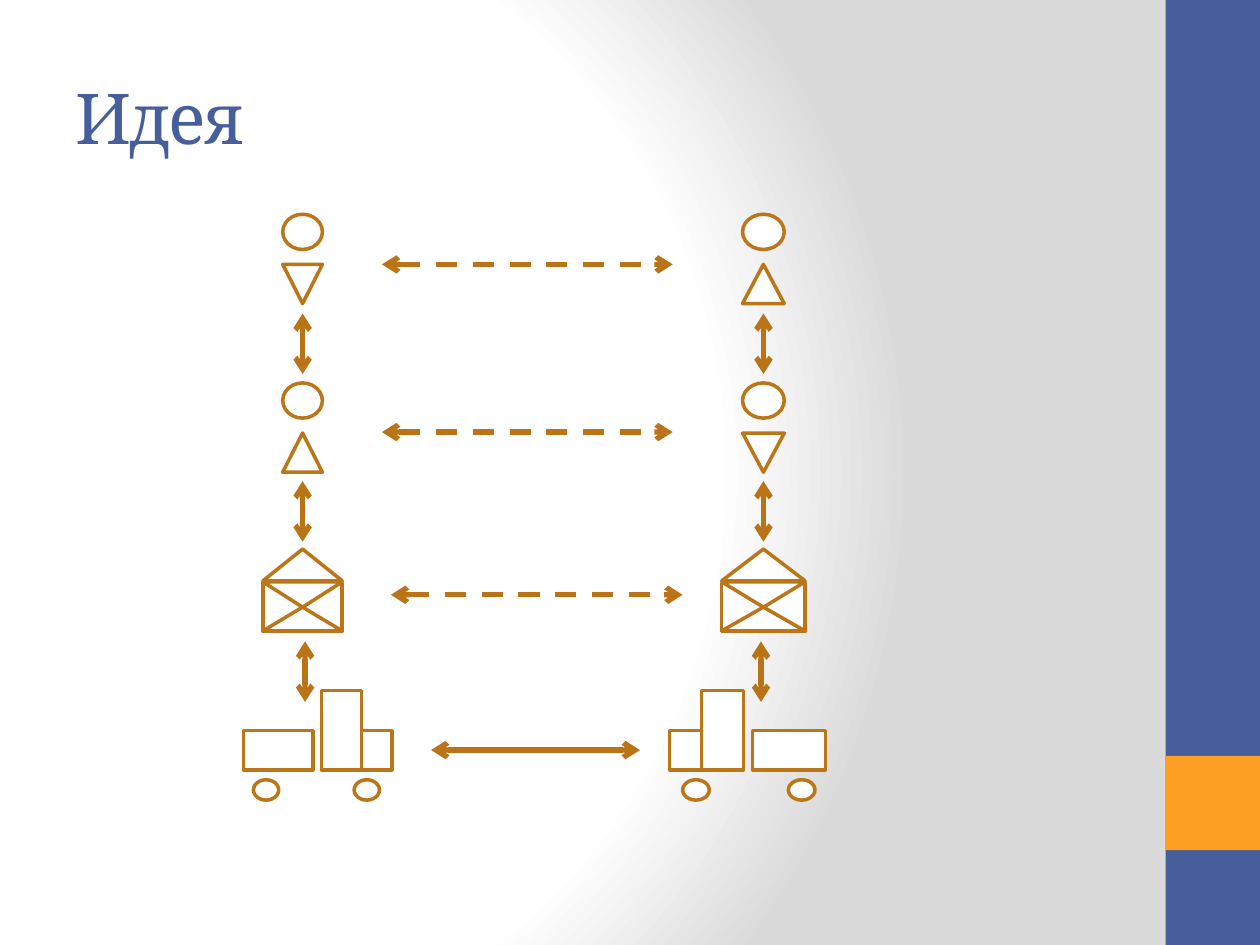
from pptx import Presentation
from pptx.dml.color import RGBColor
from pptx.enum.dml import MSO_LINE
from pptx.enum.shapes import MSO_CONNECTOR, MSO_SHAPE
from pptx.enum.text import MSO_ANCHOR
from pptx.oxml import parse_xml
from pptx.oxml.ns import nsdecls, qn
from pptx.util import Cm, Pt
from lxml.etree import SubElement

COLORS = {
    "white": "FFFFFF", "grey": "DADADA", "blue": "465E9C",
    "orange": "FDA023", "brown": "BB761A", "arrow": "BA7417",
}
RECT, OVAL = MSO_SHAPE.RECTANGLE, MSO_SHAPE.OVAL
TRI = MSO_SHAPE.ISOSCELES_TRIANGLE
STEP = 3.4


def color(name):
    return RGBColor.from_string(COLORS[name])


def paint_back(slide):
    slide.background.fill.gradient()
    old = slide.background._cSld.find(".//" + qn("a:gradFill"))
    stops = "".join(
        f'<a:gs pos="{pos}"><a:srgbClr val="{COLORS[name]}"/></a:gs>'
        for pos, name in ((0, "white"), (75000, "white"), (100000, "grey")))
    new = parse_xml(
        f'<a:gradFill {nsdecls("a")} rotWithShape="1"><a:gsLst>{stops}</a:gsLst>'
        '<a:path path="circle">'
        '<a:fillToRect l="20000" t="50000" r="100000" b="50000"/>'
        '</a:path></a:gradFill>')
    old.getparent().replace(old, new)


def add_box(shapes, kind, x, y, w, h, fill="white", line="brown"):
    box = shapes.add_shape(kind, Cm(x), Cm(y), Cm(w), Cm(h))
    box.shadow.inherit = False
    box.fill.solid()
    box.fill.fore_color.rgb = color(fill)
    if line:
        box.line.color.rgb = color(line)
        box.line.width = Pt(2)
    else:
        box.line.fill.background()
    return box


def add_arrow(shapes, x1, y1, x2, y2, dash=False):
    arrow = shapes.add_connector(
        MSO_CONNECTOR.STRAIGHT, Cm(x1), Cm(y1), Cm(x2), Cm(y2))
    arrow.line.color.rgb = color("arrow")
    arrow.line.width = Pt(3)
    if dash:
        arrow.line.dash_style = MSO_LINE.DASH
    line = arrow.line._get_or_add_ln()
    for end in ("a:headEnd", "a:tailEnd"):
        SubElement(line, qn(end), type="arrow")
    SubElement(arrow._element.spPr, qn("a:effectLst"))


def add_title(slide, text):
    box = slide.shapes.add_textbox(Cm(1.27), Cm(0.76), Cm(21.16), Cm(3.18))
    frame = box.text_frame
    frame.word_wrap = True
    frame.vertical_anchor = MSO_ANCHOR.MIDDLE
    para = frame.paragraphs[0]
    para.text = text
    para.font.name = "Cambria"
    para.font.size = Pt(40)
    para.font.color.rgb = color("blue")
    para.runs[0].font._element.set("spc", "-100")


def add_side(slide, mid, turns, way=1, scale=1):
    shapes = slide.shapes.add_group_shape().shapes

    def part(kind, dx, y, w, h, turn=0):
        x = mid + scale * (way * (dx + w / 2) - w / 2)
        add_box(shapes, kind, x, y, w * scale, h).rotation = turn

    for row, turn in enumerate(turns):
        part(OVAL, -0.4, 4.32 + row * STEP, 0.8, 0.71)
        part(TRI, -0.4, 5.33 + row * STEP, 0.8, 0.79, turn)

    for kind, y, h, turn in ((RECT, 11.76, 0.97, 0), (TRI, 11.07, 0.64, 0),
                             (TRI, 11.73, 0.51, 180), (TRI, 12.24, 0.48, 0)):
        part(kind, -0.8, y, 1.6, h, turn)

    for dx, y, w, h in ((-1.19, 14.73, 1.4, 0.79), (0.38, 13.92, 0.81, 1.6),
                        (1.19, 14.73, 0.61, 0.79)):
        part(RECT, dx, y, w, h)
    for dx in (-0.99, 1.04):
        part(OVAL, dx, 15.72, 0.51, 0.41)

    for dx, y in ((0, 6.32), (0, 9.7), (0.05, 12.93)):
        x = mid + way * dx
        add_arrow(shapes, x, y, x, y + 1.22)


def main():
    deck = Presentation()
    deck.slide_width, deck.slide_height = Cm(25.4), Cm(19.05)
    slide = deck.slides.add_slide(deck.slide_layouts[6])
    paint_back(slide)
    add_box(slide.shapes, RECT, 23.5, 0, 1.9, 19.05, "blue", None)
    add_box(slide.shapes, RECT, 23.5, 15.24, 1.9, 1.9, "orange", None)
    add_title(slide, "Идея")
    add_side(slide, 6.1, (180, 0))
    add_side(slide, 15.39, (0, 180), way=-1, scale=1.05)
    for x1, x2, y, dash in ((7.7, 13.56, 5.33, True), (7.7, 13.56, 8.71, True),
                            (7.88, 13.76, 11.99, True), (8.69, 12.9, 15.12, False)):
        add_arrow(slide.shapes, x1, y, x2, y, dash)
    deck.save("out.pptx")


if __name__ == "__main__":
    main()
